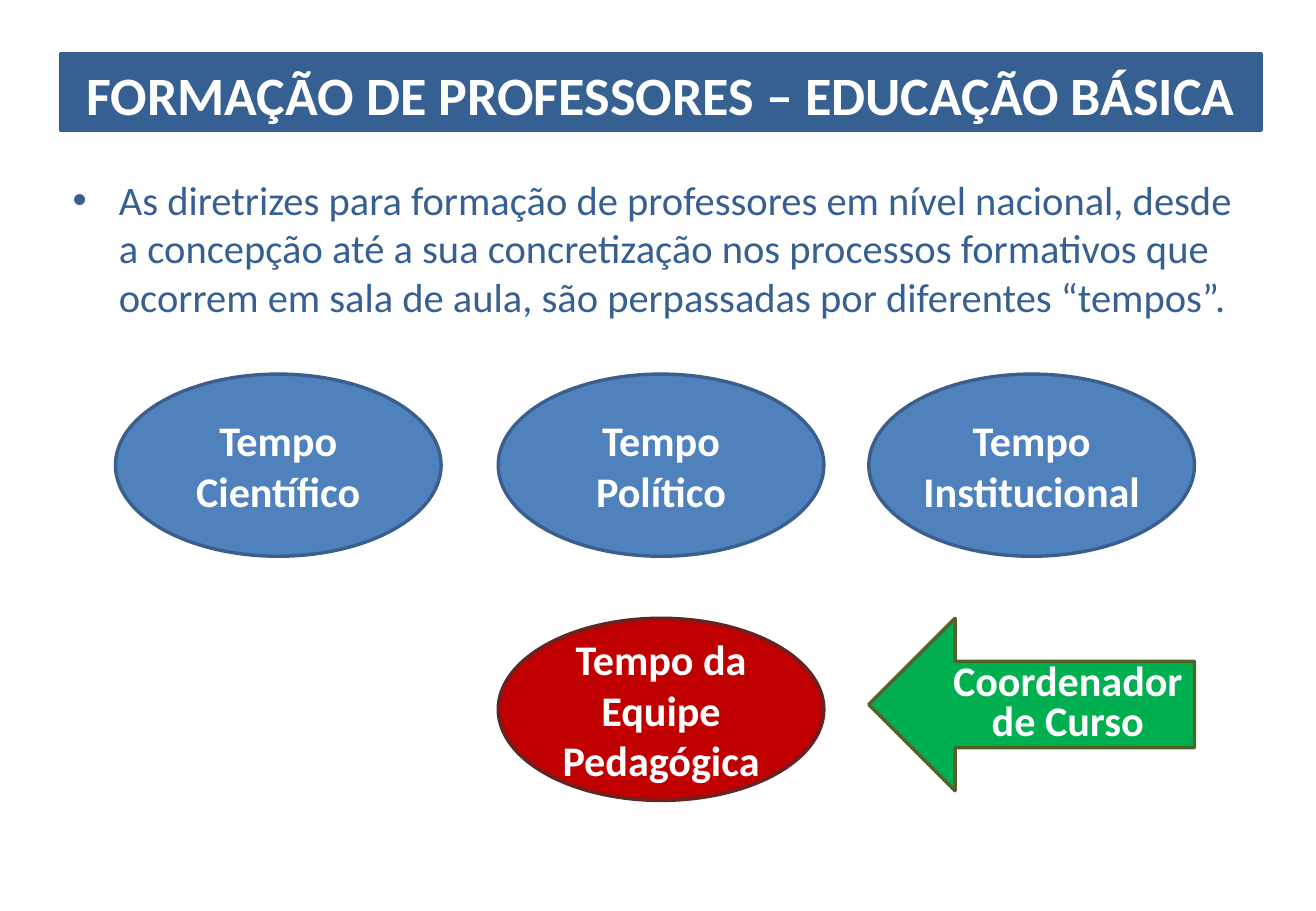
from lxml.etree import SubElement
from pptx import Presentation
from pptx.dml.color import RGBColor
from pptx.enum.shapes import MSO_SHAPE as SHAPE
from pptx.enum.text import MSO_ANCHOR as ANCHOR, MSO_AUTO_SIZE as AUTO, PP_ALIGN as ALIGN
from pptx.oxml.ns import qn
from pptx.util import Pt

PX = 9144
NAVY, BLUE, EDGE, WHITE = "376092", "4F81BD", "3A5F8C", "FFFFFF"
TITLE = dict(size=Pt(32), bold=True, name="Calibri")
BODY = dict(size=Pt(24), bold=False, name="Calibri")
LABEL = dict(size=Pt(25), bold=True, name="Calibri")


def px(*lengths):
    return [n * PX for n in lengths]


def rgb(color):
    return RGBColor.from_string(color)


def paint(sp, fill, line):
    sp.fill.solid()
    sp.fill.fore_color.rgb = rgb(fill)
    sp.line.color.rgb = rgb(line)
    sp.line.width = Pt(2)


def write(sp, text, fmt, color, align, anchor, insets):
    tf = sp.text_frame
    frame = dict(word_wrap=True, auto_size=AUTO.NONE, vertical_anchor=anchor)
    sides = ("margin_left", "margin_top", "margin_right", "margin_bottom")
    frame.update(zip(sides, px(*insets)))
    for key, value in frame.items():
        setattr(tf, key, value)
    p = tf.paragraphs[0]
    p.alignment = align
    r = p.add_run()
    r.text = text
    for key, value in fmt.items():
        setattr(r.font, key, value)
    r.font.color.rgb = rgb(color)
    return p


def add_title(s, box, text):
    sp = s.shapes.title
    sp.left, sp.top, sp.width, sp.height = px(*box)
    paint(sp, NAVY, NAVY)
    write(sp, text, TITLE, WHITE, ALIGN.CENTER, ANCHOR.MIDDLE, (10, 4, 10, 0))


def add_body(s, box, text):
    sp = s.shapes.add_textbox(*px(*box))
    p = write(sp, text, BODY, NAVY, ALIGN.LEFT, ANCHOR.TOP, (10, 5, 10, 5))
    pPr = p._p.get_or_add_pPr()
    pPr.set("marL", str(38 * PX))
    pPr.set("indent", str(-38 * PX))
    SubElement(pPr, qn("a:buFont"), typeface="Arial")
    SubElement(pPr, qn("a:buChar"), char="•")


def add_label(s, kind, box, text, fill, line, insets=(0, 0, 0, 0)):
    sp = s.shapes.add_shape(kind, *px(*box))
    sp.shadow.inherit = False
    paint(sp, fill, line)
    return write(sp, text, LABEL, WHITE, ALIGN.CENTER, ANCHOR.MIDDLE, insets)


def add_times(s, box):
    left, top, width, height = box
    columns = [left, left + 315, left + 620]
    lower = top + 201
    names = ["Tempo Científico", "Tempo Político", "Tempo Institucional"]
    for x, name in zip(columns, names):
        add_label(s, SHAPE.OVAL, (x, top, width, height), name, BLUE, EDGE)
    add_label(s, SHAPE.OVAL, (columns[1], lower, width, height),
              "Tempo da Equipe Pedagógica", "C00000", "632523")
    p = add_label(s, SHAPE.LEFT_ARROW, (columns[2], lower, width, height - 8),
                  "Coordenador de Curso", "00B050", "4F6228", (24, 0, 0, 0))
    p.line_spacing = 0.8


def main():
    prs = Presentation()
    prs.slide_width, prs.slide_height = px(1083, 750)
    s = prs.slides.add_slide(prs.slide_layouts[5])
    add_title(s, (50, 44, 988, 63), "FORMAÇÃO DE PROFESSORES – EDUCAÇÃO BÁSICA")
    add_body(s, (50, 139, 988, 140),
             "As diretrizes para formação de professores em nível nacional, desde "
             "a concepção até a sua concretização nos processos formativos que "
             "ocorrem em sala de aula, são perpassadas por diferentes “tempos”.")
    add_times(s, (95, 308, 268, 150))
    prs.save("out.pptx")


if __name__ == "__main__":
    main()
